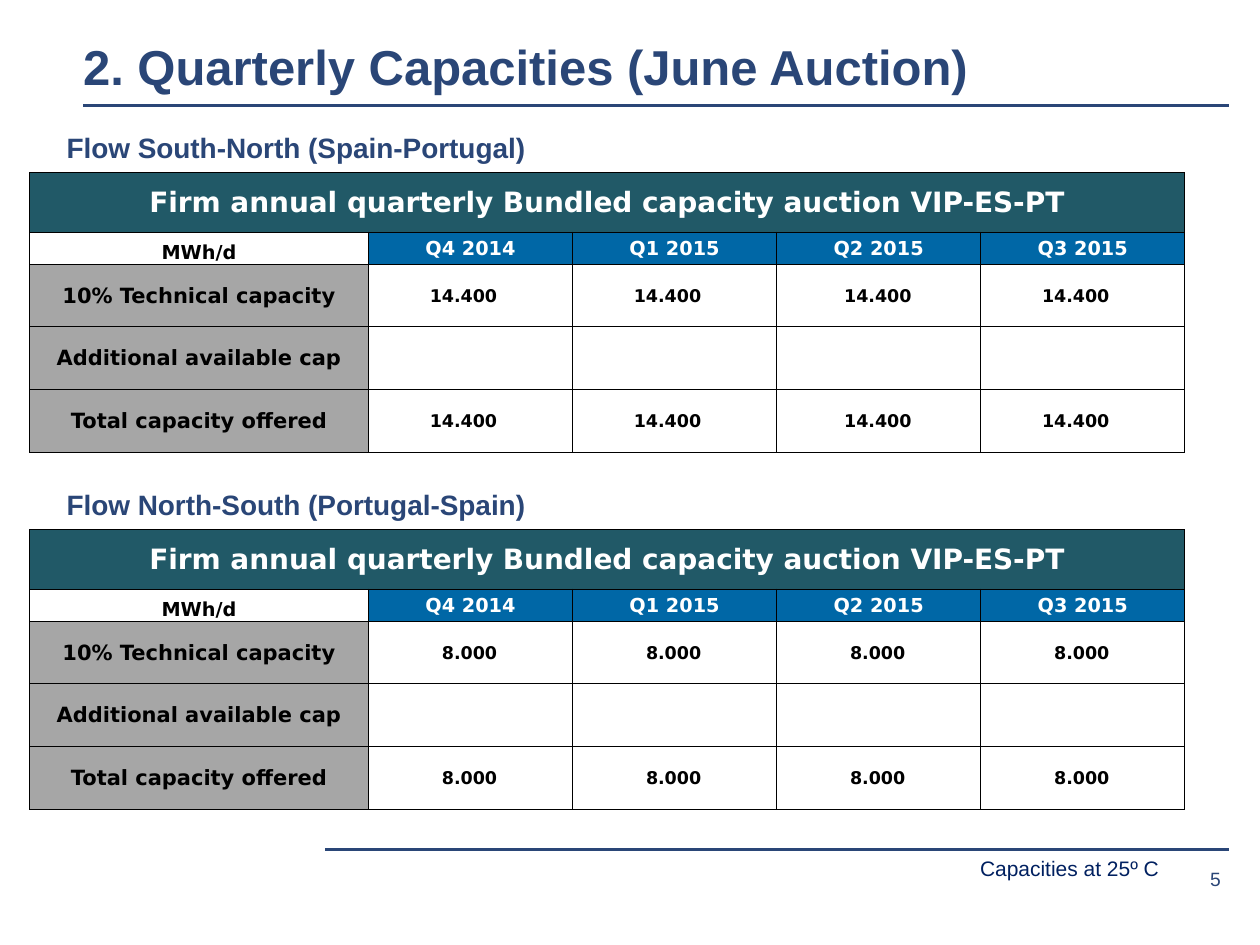
from dataclasses import dataclass

from lxml import etree
from pptx import Presentation
from pptx.dml.color import RGBColor
from pptx.enum.shapes import MSO_CONNECTOR
from pptx.enum.text import MSO_ANCHOR, PP_ALIGN
from pptx.oxml.ns import qn
from pptx.util import Inches, Pt

STRAIGHT = MSO_CONNECTOR.STRAIGHT
TOP, MIDDLE, BOTTOM = MSO_ANCHOR.TOP, MSO_ANCHOR.MIDDLE, MSO_ANCHOR.BOTTOM
LEFT, CENTER, RIGHT = PP_ALIGN.LEFT, PP_ALIGN.CENTER, PP_ALIGN.RIGHT

COLORS = {
    "navy": "2A4677", "note": "002060", "teal": "215967", "blue": "0067A6",
    "gray": "A6A6A6", "white": "FFFFFF", "black": "000000",
}
SLIDE_WIDTH, SLIDE_HEIGHT = Inches(10), Inches(7.5)
COLUMN_PERCENTS = [26.9] + [16.2] * 4
ROW_PERCENTS = [6.3, 3.4] + [6.63] * 3
TABLE_LEFT, TABLE_TOP = 2.35, 18.25
HEADING_TOP, SECTION_PITCH = 13.2, 37.78
TABLE_TITLE = "Firm annual quarterly Bundled capacity auction VIP-ES-PT"
QUARTERS = ["Q4 2014", "Q1 2015", "Q2 2015", "Q3 2015"]
ROW_LABELS = ["10% Technical capacity", "Additional available cap", "Total capacity offered"]
EMPTY_ROW = 1


@dataclass(frozen=True)
class Label:
    text: str
    left: float
    top: float
    width: float
    height: float
    size: int
    color: str = "navy"
    bold: bool = False
    align: PP_ALIGN = LEFT
    anchor: MSO_ANCHOR = TOP
    inset: tuple = (0, 0, 0, 0)
    wrap: bool = True


@dataclass(frozen=True)
class Rule:
    start: float
    end: float
    top: float


@dataclass(frozen=True)
class Section:
    heading: str
    capacity: str
    right_insets: tuple


@dataclass(frozen=True)
class CellStyle:
    size: int
    color: str
    fill: str = ""
    align: PP_ALIGN = CENTER
    anchor: MSO_ANCHOR = MIDDLE
    right_inset: float = 0.01


TITLE_STYLE = CellStyle(16, "white", "teal")
UNIT_STYLE = CellStyle(11, "black", anchor=BOTTOM)
QUARTER_STYLE = CellStyle(11, "white", "blue")
ROW_STYLE = CellStyle(12, "black", "gray")

BOX_INSET = (0.1, 0.05, 0.1, 0.05)
RULES = [Rule(6.6, 97.5, 11.2), Rule(25.8, 97.5, 89.87)]
LABELS = [
    Label("2. Quarterly Capacities (June Auction)", 6.6, 4.8, 91.1, 5.33, 28,
          bold=True, anchor=BOTTOM),
    Label("Capacities at 25º C", 76.8, 89.87, 16.3, 4, 12, "note",
          inset=BOX_INSET, wrap=False),
    Label("5", 89.4, 90.93, 7.9, 4.13, 11, align=RIGHT, anchor=MIDDLE,
          inset=(0, 0, 0.04, 0)),
]
SECTIONS = [
    Section("Flow South-North (Spain-Portugal)", "14.400", (0.6, 0.6, 0.55, 0.6)),
    Section("Flow North-South (Portugal-Spain)", "8.000", (0.6,) * 4),
]


def across(percent: float) -> int:
    return round(SLIDE_WIDTH * percent / 100)


def down(percent: float) -> int:
    return round(SLIDE_HEIGHT * percent / 100)


def rgb(name: str) -> RGBColor:
    return RGBColor.from_string(COLORS[name])


def add_run(paragraph, text: str, font_name: str, size: int, color: str, bold: bool) -> None:
    run = paragraph.add_run()
    run.text = text
    run.font.name = font_name
    run.font.size = Pt(size)
    run.font.bold = bold
    run.font.color.rgb = rgb(color)


def draw_label(slide, label: Label) -> None:
    shape = slide.shapes.add_textbox(
        across(label.left), down(label.top), across(label.width), down(label.height))
    frame = shape.text_frame
    frame.word_wrap = label.wrap
    frame.vertical_anchor = label.anchor
    (frame.margin_left, frame.margin_top,
     frame.margin_right, frame.margin_bottom) = map(Inches, label.inset)
    paragraph = frame.paragraphs[0]
    paragraph.alignment = label.align
    add_run(paragraph, label.text, "Arial", label.size, label.color, label.bold)


def draw_rule(slide, rule: Rule) -> None:
    connector = slide.shapes.add_connector(
        STRAIGHT, across(rule.start), down(rule.top), across(rule.end), down(rule.top))
    connector.line.color.rgb = rgb("navy")
    connector.line.width = Pt(1.5)
    etree.SubElement(connector._element.spPr, qn("a:effectLst"))


def add_borders(cell) -> None:
    properties = cell._tc.get_or_add_tcPr()
    for index, side in enumerate(("lnL", "lnR", "lnT", "lnB")):
        border = etree.Element(qn(f"a:{side}"), w=str(Pt(0.5)))
        fill = etree.SubElement(border, qn("a:solidFill"))
        etree.SubElement(fill, qn("a:srgbClr"), val=COLORS["black"])
        properties.insert(index, border)


def fill_cell(cell, text: str, style: CellStyle) -> None:
    cell.margin_left = cell.margin_top = Inches(0.01)
    cell.margin_right = Inches(style.right_inset)
    cell.margin_bottom = 0
    cell.vertical_anchor = style.anchor
    if style.fill:
        cell.fill.solid()
        cell.fill.fore_color.rgb = rgb(style.fill)
    else:
        cell.fill.background()
    if text:
        paragraph = cell.text_frame.paragraphs[0]
        paragraph.alignment = style.align
        add_run(paragraph, text, "DejaVu Sans", style.size, style.color, True)


def draw_section(slide, section: Section, offset: float) -> None:
    draw_label(slide, Label(section.heading, 4.3, HEADING_TOP + offset, 52, 4.93, 16,
                            bold=True, inset=BOX_INSET))
    table = slide.shapes.add_table(
        len(ROW_PERCENTS), len(COLUMN_PERCENTS), across(TABLE_LEFT), down(TABLE_TOP + offset),
        across(sum(COLUMN_PERCENTS)), down(sum(ROW_PERCENTS))).table
    for column, percent in zip(table.columns, COLUMN_PERCENTS):
        column.width = across(percent)
    for row, percent in zip(table.rows, ROW_PERCENTS):
        row.height = down(percent)

    table.cell(0, 0).merge(table.cell(0, len(QUARTERS)))
    fill_cell(table.cell(0, 0), TABLE_TITLE, TITLE_STYLE)
    fill_cell(table.cell(1, 0), "MWh/d", UNIT_STYLE)
    for column, quarter in enumerate(QUARTERS, 1):
        fill_cell(table.cell(1, column), quarter, QUARTER_STYLE)
    for index, row_label in enumerate(ROW_LABELS):
        fill_cell(table.cell(index + 2, 0), row_label, ROW_STYLE)
        value = "" if index == EMPTY_ROW else section.capacity
        for column, inset in enumerate(section.right_insets, 1):
            style = CellStyle(10, "black", "white", RIGHT, right_inset=inset)
            fill_cell(table.cell(index + 2, column), value, style)
    for cell in table.iter_cells():
        add_borders(cell)


def main() -> None:
    presentation = Presentation()
    presentation.slide_width, presentation.slide_height = SLIDE_WIDTH, SLIDE_HEIGHT
    slide = presentation.slides.add_slide(presentation.slide_layouts[6])
    for rule in RULES:
        draw_rule(slide, rule)
    for index, section in enumerate(SECTIONS):
        draw_section(slide, section, index * SECTION_PITCH)
    for label in LABELS:
        draw_label(slide, label)
    presentation.save("out.pptx")


if __name__ == "__main__":
    main()
